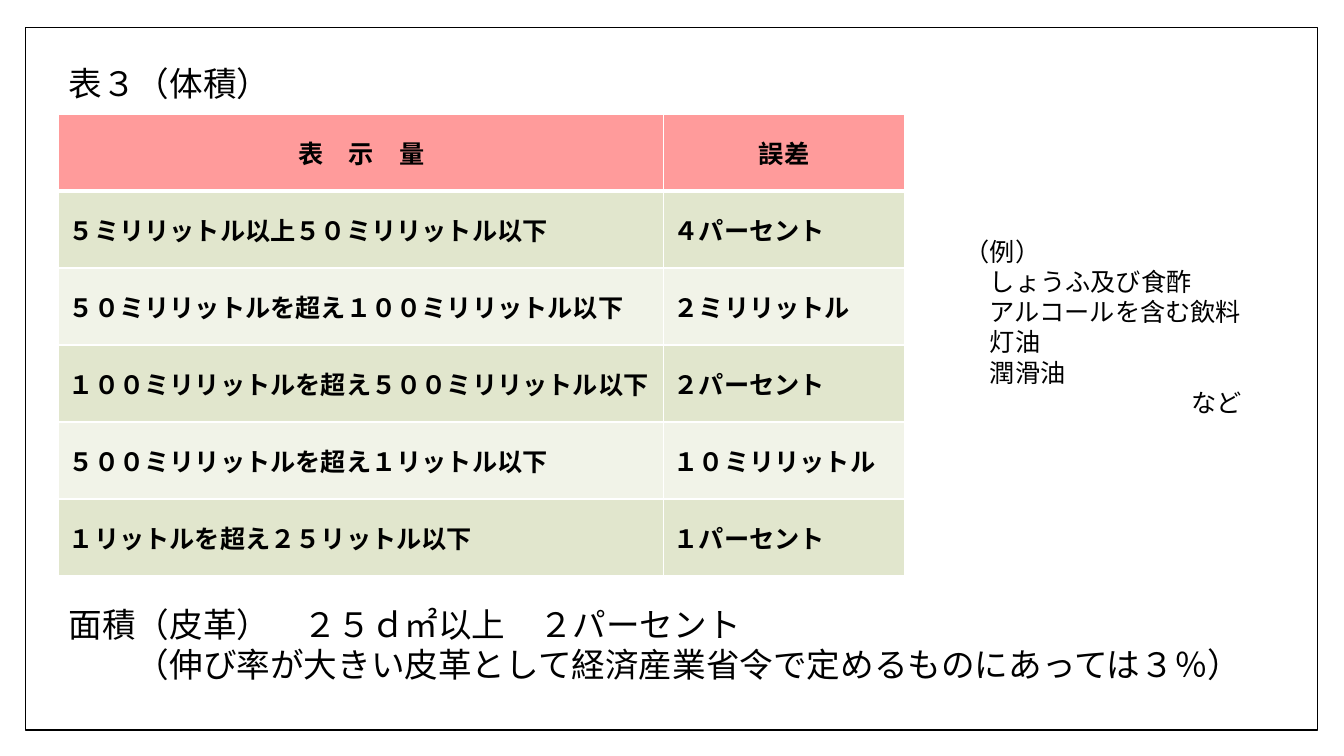
"""Build the slide of volume and area tolerances."""
from lxml.etree import SubElement
from pptx import Presentation
from pptx.dml.color import RGBColor
from pptx.enum.shapes import MSO_SHAPE
from pptx.enum.text import MSO_ANCHOR, PP_ALIGN
from pptx.oxml.ns import qn
from pptx.util import Pt


def paint(fill, color):
    fill.solid()
    fill.fore_color.rgb = RGBColor.from_string(color)


def style(para, size, bold=False):
    for run in para.runs:
        run.font.name = "Calibri"
        run.font.size = Pt(size)
        run.font.bold = bold
        paint(run.font.fill, "000000")


prs = Presentation()
prs.slide_width, prs.slide_height = Pt(960), Pt(540)
slide = prs.slides.add_slide(prs.slide_layouts[6])
shapes = slide.shapes

frame = shapes.add_shape(MSO_SHAPE.RECTANGLE, Pt(18), Pt(19.5), Pt(923), Pt(502))
frame.shadow.inherit = False
paint(frame.fill, "FFFFFF")
paint(frame.line.fill, "000000")
frame.line.width = Pt(1)

rows = [
    ("表　示　量", "誤差"),
    ("５ミリリットル以上５０ミリリットル以下", "４パーセント"),
    ("５０ミリリットルを超え１００ミリリットル以下", "２ミリリットル"),
    ("１００ミリリットルを超え５００ミリリットル以下", "２パーセント"),
    ("５００ミリリットルを超え１リットル以下", "１０ミリリットル"),
    ("１リットルを超え２５リットル以下", "１パーセント"),
]
table = shapes.add_table(len(rows), 2, Pt(42), Pt(81.5), Pt(604), Pt(330)).table
table.columns[0].width, table.columns[1].width = Pt(432), Pt(172)
for r, row in enumerate(rows):
    table.rows[r].height = Pt(55)
    for c, text in enumerate(row):
        cell = table.cell(r, c)
        cell.text_frame.text = text
        cell.vertical_anchor = MSO_ANCHOR.MIDDLE
        para = cell.text_frame.paragraphs[0]
        style(para, 18, True)
        if r == 0:
            para.alignment = PP_ALIGN.CENTER
        props = cell._tc.get_or_add_tcPr()
        for side in "LRTB":
            thick = (r, side) in [(0, "B"), (1, "T")]
            line = SubElement(props, qn(f"a:ln{side}"), w=str(Pt(3 if thick else 1)))
            SubElement(SubElement(line, qn("a:solidFill")), qn("a:srgbClr"), val="FFFFFF")
        paint(cell.fill, "FF9B9B" if r == 0 else ("F1F3E8", "E1E6CD")[r % 2])

notes = [
    (42, 41, 186, 40, 24, [("表３（体積）", 0)]),
    (682, 165, 235, 138, 18, [
        ("（例）", 0),
        ("しょうふ及び食酢", 1),
        ("アルコールを含む飲料", 1),
        ("灯油", 1),
        ("潤滑油", 1),
        ("など", 9),
    ]),
    (42, 427.5, 875, 65.5, 24, [
        ("面積（皮革）　２５ｄ㎡以上　２パーセント", 0),
        ("（伸び率が大きい皮革として経済産業省令で定めるものにあっては３％）", 2),
    ]),
]
for left, top, width, height, size, lines in notes:
    body = shapes.add_textbox(Pt(left), Pt(top), Pt(width), Pt(height)).text_frame
    body.word_wrap = True
    body.text = "\n".join(text for text, _ in lines)
    for para, (_, indent) in zip(body.paragraphs, lines):
        style(para, size)
        para._p.get_or_add_pPr().set("marL", str(Pt(indent * size)))
    if len(lines) == 1:
        body.vertical_anchor = MSO_ANCHOR.MIDDLE
        body.paragraphs[0].line_spacing = 0.9

prs.save("out.pptx")
